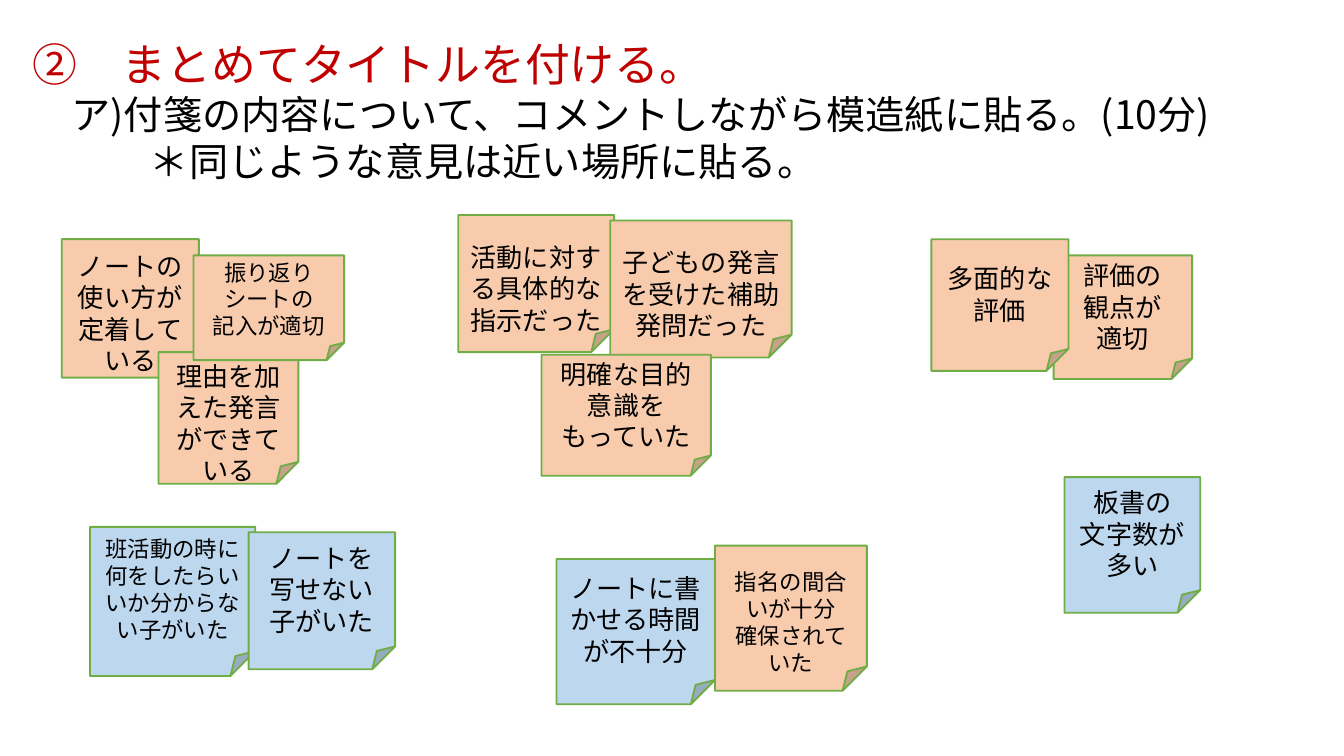
from dataclasses import dataclass

from lxml.etree import SubElement
from pptx import Presentation
from pptx.dml.color import RGBColor
from pptx.enum.shapes import MSO_SHAPE
from pptx.enum.text import MSO_ANCHOR, MSO_AUTO_SIZE, PP_ALIGN
from pptx.oxml.ns import qn
from pptx.slide import Slide
from pptx.text.text import TextFrame
from pptx.util import Inches, Pt

FONT = "Noto Sans CJK JP"
WIDTH = 10
HEIGHT = WIDTH * 9 / 16
COLORS = {
    "good": "F8CBAD",
    "issue": "BDD7EE",
    "edge": "70AD47",
    "text": "000000",
    "head": "C00000",
}


@dataclass(frozen=True)
class Note:
    left: float
    top: float
    width: float
    height: float
    text: str
    kind: str = "good"
    size: int = 14
    drop: float = 0


@dataclass(frozen=True)
class Line:
    text: str
    size: int = 21
    color: str = "text"
    indent: int = 0


NOTES = [
    Note(0.46, 1.78, 1.02, 1.03, "ノートの使い方が定着している", drop=0.24),
    Note(1.18, 2.62, 1.04, 0.98, "理由を加えた発言ができている", drop=0.24),
    Note(3.41, 1.6, 1.16, 1.02, "活動に対する具体的な指示だった", drop=0.24),
    Note(5.32, 4.06, 1.13, 1.08, "指名の間合いが十分\n確保されていた", size=12, drop=0.24),
    Note(4.54, 1.64, 1.35, 1.02, "子どもの発言を受けた補助発問だった", drop=0.24),
    Note(7.92, 3.55, 1.01, 1.01, "板書の\n文字数が\n多い", "issue"),
    Note(4.14, 4.16, 1.18, 1.08, "ノートに書かせる時間が不十分", "issue"),
    Note(4.03, 2.64, 1.26, 0.9, "明確な目的意識を\nもっていた"),
    Note(0.67, 3.92, 1.23, 1.11, "班活動の時に何をしたらいいか分からない子がいた", "issue", 12),
    Note(1.44, 1.9, 1.12, 0.78, "振り返りシートの\n記入が適切", size=12),
    Note(7.84, 1.9, 1.03, 0.92, "評価の\n観点が\n適切"),
    Note(1.85, 3.96, 1.09, 1.02, "ノートを写せない子がいた", "issue"),
    Note(6.93, 1.78, 1.02, 0.98, "多面的な評価"),
]

LINES = [
    Line("②　まとめてタイトルを付ける。", 24, "head"),
    Line("ア)付箋の内容について、コメントしながら模造紙に貼る。(10分)", indent=1),
    Line("＊同じような意見は近い場所に貼る。", indent=3),
]


def rgb(key: str) -> RGBColor:
    return RGBColor.from_string(COLORS[key])


def write(frame: TextFrame, lines: list[Line], align: PP_ALIGN, drop: float = 0) -> None:
    frame.word_wrap = True
    frame.margin_left = frame.margin_right = Inches(0.07)
    frame.margin_top = Inches(0.04 + drop)
    frame.margin_bottom = Inches(0.04)
    frame.text = "\n".join(line.text for line in lines)
    for para, line in zip(frame.paragraphs, lines):
        para.alignment = align
        font = para.font
        font.name, font.size = FONT, Pt(line.size)
        font.color.rgb = rgb(line.color)
        props = para._p.pPr
        SubElement(props.find(qn("a:defRPr")), qn("a:ea"), typeface=FONT)
        props.set("marL", str(Pt(line.size * line.indent)))
        props.set("indent", "0")


def stick(slide: Slide, note: Note) -> None:
    box = map(Inches, (note.left, note.top, note.width, note.height))
    shape = slide.shapes.add_shape(MSO_SHAPE.FOLDED_CORNER, *box)
    shape.shadow.inherit = False
    shape.fill.solid()
    shape.fill.fore_color.rgb = rgb(note.kind)
    shape.line.color.rgb = rgb("edge")
    shape.line.width = Pt(1)
    shape.text_frame.vertical_anchor = MSO_ANCHOR.MIDDLE
    lines = [Line(text, note.size) for text in note.text.split("\n")]
    write(shape.text_frame, lines, PP_ALIGN.CENTER, note.drop)


def main() -> None:
    """Build the slide of grouped sticky notes."""
    deck = Presentation()
    deck.slide_width, deck.slide_height = Inches(WIDTH), Inches(HEIGHT)
    slide = deck.slides.add_slide(deck.slide_layouts[5])
    title = slide.shapes.title
    title.left, title.top = Inches(0.17), Inches(0.23)
    title.width, title.height = Inches(9.47), Inches(1.19)
    frame = title.text_frame
    frame.vertical_anchor = MSO_ANCHOR.TOP
    frame.auto_size = MSO_AUTO_SIZE.NONE
    write(frame, LINES, PP_ALIGN.LEFT)
    for note in NOTES:
        stick(slide, note)
    deck.save("out.pptx")


if __name__ == "__main__":
    main()
